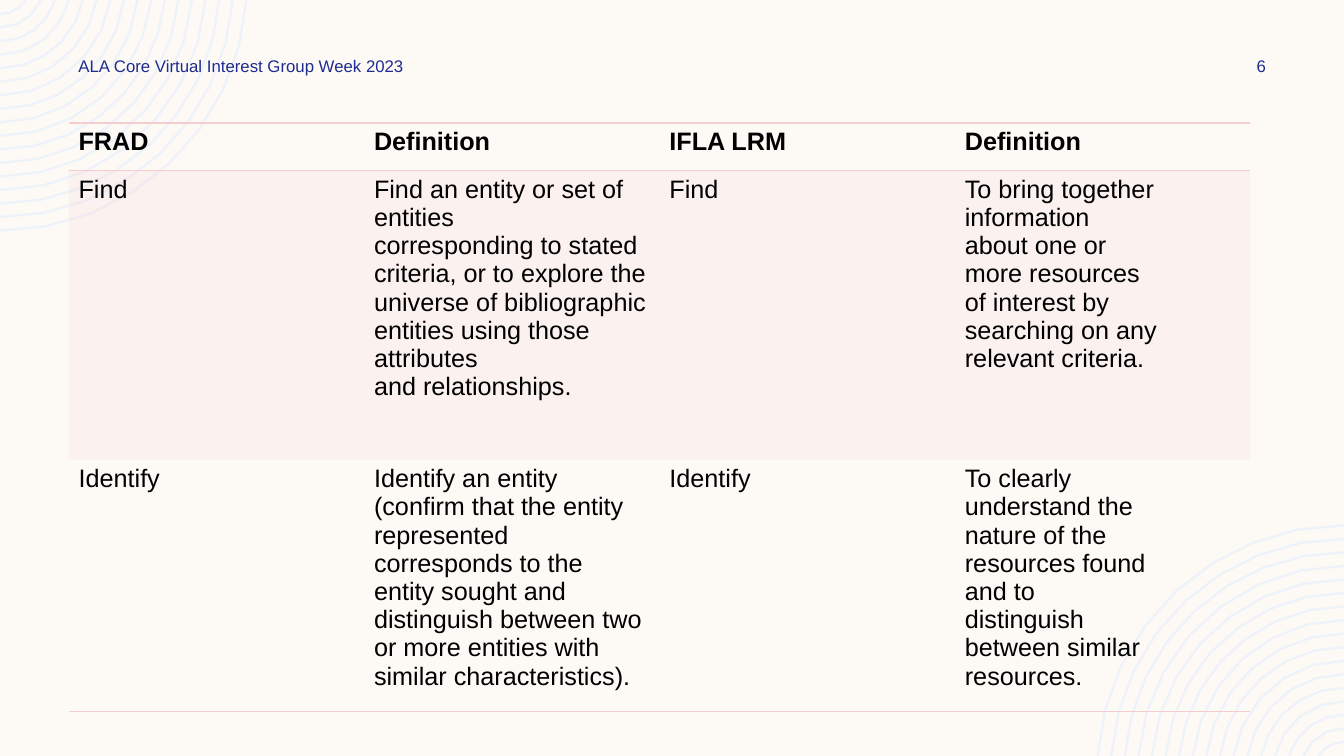
"""Build a slide comparing the FRAD and IFLA LRM user tasks in a table."""
from dataclasses import dataclass
from math import asin, cos, pi, sin, sqrt

from lxml import etree
from pptx import Presentation, util as u
from pptx.dml import color
from pptx.enum import text
from pptx.oxml import ns

W, H = u.Inches(13.33), u.Inches(7.5)
COLORS = {"back": "FDFAF6", "ring": "EEF3FA", "footer": "1F2C8F",
          "text": "000000", "accent": "F5CDCE"}
FONT = "Arial"
NO_STYLE = "{2D5ABB26-0587-4C30-8999-92F81FD0307C}"
RINGS, ARC_STEPS = 17, 8
RADIUS, RING_GAP, CENTRE_RISE = 32.64, 1.79, 2.13


@dataclass
class Label:
    text: str
    left: float
    width: float
    align: text.PP_ALIGN


@dataclass
class Row:
    height: float
    cells: list[str]
    bold: bool = False
    tinted: bool = False
    borders: tuple[str, ...] = ()


LABELS = [
    Label("ALA Core Virtual Interest Group Week 2023", 5.1, 26.26, text.PP_ALIGN.LEFT),
    Label("6", 89.8, 8.1, text.PP_ALIGN.CENTER),
]
ROWS = [
    Row(6.27, ["FRAD", "Definition", "IFLA LRM", "Definition"],
        bold=True, borders=("lnT", "lnB")),
    Row(38.27, [
        "Find",
        "Find an entity or set of entities\n"
        "corresponding to stated criteria, or to explore the\n"
        "universe of bibliographic\n"
        "entities using those attributes\n"
        "and relationships.",
        "Find",
        "To bring together\ninformation\nabout one or\nmore resources\n"
        "of interest by\nsearching on any\nrelevant criteria.",
    ], tinted=True, borders=("lnT",)),
    Row(31.07, [
        "Identify",
        "Identify an entity (confirm that the entity represented corresponds to "
        "the entity sought and distinguish between two or more entities with "
        "similar characteristics).",
        "Identify",
        "To clearly\nunderstand the\nnature of the\nresources found\nand to\n"
        "distinguish\nbetween similar\nresources.",
    ], borders=("lnB",)),
]


def across(percent: float) -> int:
    return round(W * percent / 100)


def down(percent: float) -> int:
    return round(H * percent / 100)


def rgb(name: str) -> color.RGBColor:
    return color.RGBColor.from_string(COLORS[name])


def write(tf, content: str, *, size: float, ink: str, bold: bool = False,
          align: text.PP_ALIGN = text.PP_ALIGN.LEFT) -> None:
    tf.word_wrap = True
    for i, line in enumerate(content.split("\n")):
        p = tf.add_paragraph() if i else tf.paragraphs[0]
        p.alignment = align
        r = p.add_run()
        r.text = line
        r.font.name, r.font.size, r.font.bold = FONT, u.Pt(size), bold
        r.font.color.rgb = rgb(ink)


def arc(radius: float, far_corner: bool) -> list[tuple[int, int]]:
    start = asin(CENTRE_RISE / radius)
    steps = max(3, round(ARC_STEPS * sqrt(radius / RADIUS)))
    points = []
    for i in range(steps + 1):
        angle = start + (pi / 2 - start) * i / steps
        x, y = down(radius * cos(angle)), down(radius * sin(angle) - CENTRE_RISE)
        points.append((W - x, H - y) if far_corner else (x, y))
    return points


def add_rings(s, far_corner: bool) -> None:
    arcs = [arc(RADIUS - RING_GAP * i, far_corner) for i in range(RINGS)]
    builder = s.shapes.build_freeform(*arcs[0][0])
    for i, points in enumerate(arcs):
        if i:
            builder.move_to(*points[0])
        builder.add_line_segments(points[1:], close=False)
    sp = builder.convert_to_shape()
    sp.shadow.inherit = False
    sp.fill.background()
    sp.line.color.rgb = rgb("ring")
    sp.line.width = u.Pt(1.75)


def add_label(s, label: Label) -> None:
    sp = s.shapes.add_textbox(across(label.left), down(6.67), across(label.width), down(4))
    sp.text_frame.vertical_anchor = text.MSO_ANCHOR.MIDDLE
    write(sp.text_frame, label.text, size=12, ink="footer", align=label.align)


def add_borders(cell, visible: tuple[str, ...]) -> None:
    props = cell._tc.get_or_add_tcPr()
    for side in ("lnL", "lnR", "lnT", "lnB"):
        ln = etree.SubElement(props, ns.qn(f"a:{side}"), w=str(u.Pt(1)))
        if side in visible:
            fill = etree.SubElement(ln, ns.qn("a:solidFill"))
            etree.SubElement(fill, ns.qn("a:srgbClr"), val=COLORS["accent"])
        else:
            etree.SubElement(ln, ns.qn("a:noFill"))


def tint(cell) -> None:
    cell.fill.solid()
    cell.fill.fore_color.rgb = rgb("accent")
    shade = cell._tc.tcPr.find(f"{ns.qn('a:solidFill')}/{ns.qn('a:srgbClr')}")
    etree.SubElement(shade, ns.qn("a:alpha"), val="20000")


def add_task_table(s, rows: list[Row]) -> None:
    columns = len(rows[0].cells)
    frame = s.shapes.add_table(len(rows), columns, across(5.1), down(16.27),
                               across(87.92), down(sum(row.height for row in rows)))
    table = frame.table
    table.horz_banding = False
    table._tbl.tblPr.find(ns.qn("a:tableStyleId")).text = NO_STYLE
    for i, row in enumerate(rows):
        table.rows[i].height = down(row.height)
        for j, content in enumerate(row.cells):
            cell = table.cell(i, j)
            write(cell.text_frame, content, size=18, ink="text", bold=row.bold)
            add_borders(cell, row.borders)
            if row.tinted:
                tint(cell)
            else:
                cell.fill.background()


def main() -> None:
    prs = Presentation()
    prs.slide_width, prs.slide_height = W, H
    s = prs.slides.add_slide(prs.slide_layouts[6])
    s.background.fill.solid()
    s.background.fill.fore_color.rgb = rgb("back")
    for far_corner in (False, True):
        add_rings(s, far_corner)
    for label in LABELS:
        add_label(s, label)
    add_task_table(s, ROWS)
    prs.save("out.pptx")


if __name__ == "__main__":
    main()
